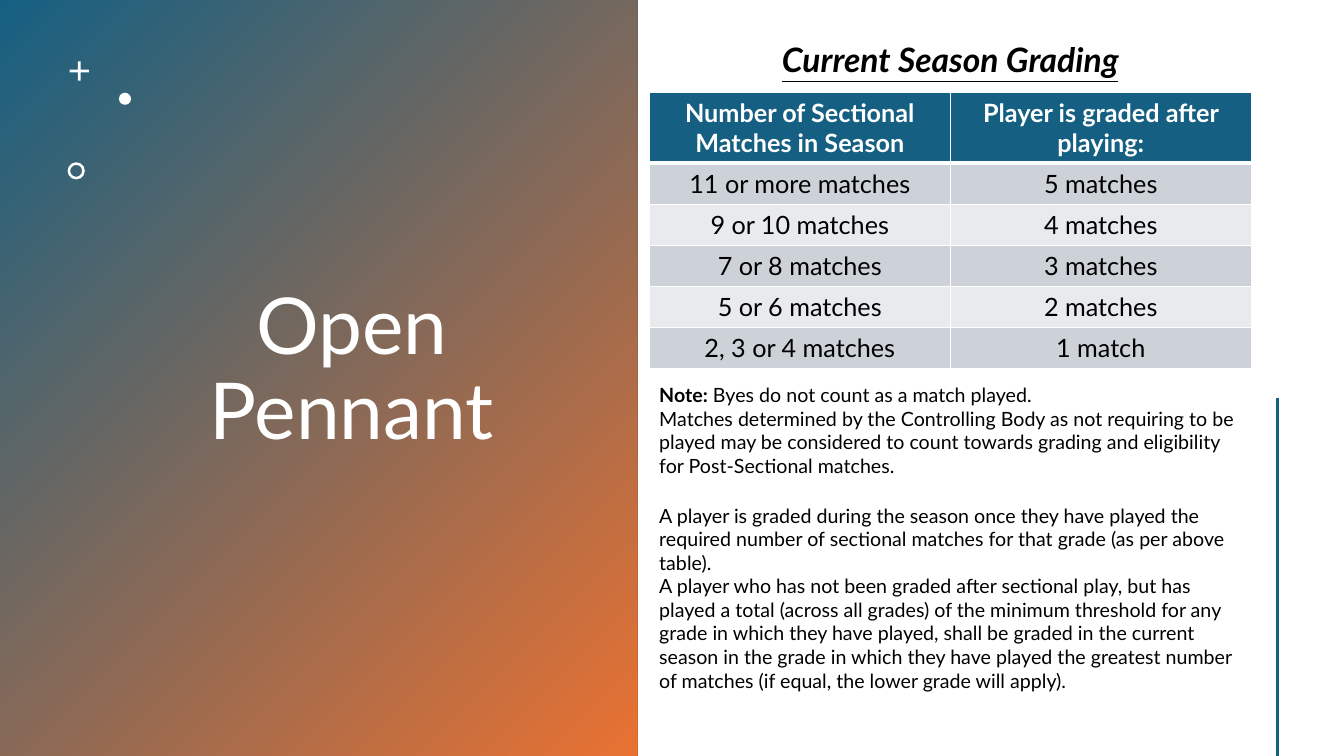
from lxml import etree
from pptx import Presentation
from pptx import util as u
from pptx.dml.color import RGBColor
from pptx.enum import shapes, text
from pptx.oxml import ns

SLIDE_WIDTH, SLIDE_HEIGHT = u.Inches(13.33), u.Inches(7.5)
COLORS = {
    "blue": "156082", "orange": "E97132", "white": "FFFFFF", "black": "000000",
    "dark band": "CCD2D8", "light band": "E8EAED",
}
FONT = "Lato"
CONTENT_LEFT, CONTENT_WIDTH = 48.31, 44.79
HEADER_HEIGHT, ROW_HEIGHT = 9.2, 5.43

GRADING = [
    ("Number of Sectional Matches in Season", "Player is graded after playing:"),
    ("11 or more matches", "5 matches"),
    ("9 or 10 matches", "4 matches"),
    ("7 or 8 matches", "3 matches"),
    ("5 or 6 matches", "2 matches"),
    ("2, 3 or 4 matches", "1 match"),
]
NOTE_LABEL = "Note:"
NOTES = [
    " Byes do not count as a match played.",
    "Matches determined by the Controlling Body as not requiring to be played may be "
    "considered to count towards grading and eligibility for Post-Sectional matches.",
    "A player is graded during the season once they have played the required number of "
    "sectional matches for that grade (as per above table).",
    "A player who has not been graded after sectional play, but has played a total (across "
    "all grades) of the minimum threshold for any grade in which they have played, shall be "
    "graded in the current season in the grade in which they have played the greatest number "
    "of matches (if equal, the lower grade will apply).",
]


def color(name):
    return RGBColor.from_string(COLORS[name])


def across(percent):
    return round(SLIDE_WIDTH * percent / 100)


def down(percent):
    return round(SLIDE_HEIGHT * percent / 100)


def area(left, top, width, height):
    """Turn percentages of the slide into a position and size."""
    return across(left), down(top), across(width), down(height)


def add_run(paragraph, words, size, color_name="black", **formats):
    run = paragraph.add_run()
    run.text = words
    run.font.color.rgb = color(color_name)
    for name, value in {"name": FONT, "size": u.Pt(size), **formats}.items():
        setattr(run.font, name, value)


def add_text_frame(slide, box, anchor=text.MSO_ANCHOR.TOP):
    frame = slide.shapes.add_textbox(*area(*box)).text_frame
    frame.word_wrap = True
    frame.vertical_anchor = anchor
    return frame


def add_line_of_text(slide, box, words, size, color_name="black",
                     anchor=text.MSO_ANCHOR.TOP, spacing=1.0, **formats):
    paragraph = add_text_frame(slide, box, anchor).paragraphs[0]
    paragraph.alignment = text.PP_ALIGN.CENTER
    paragraph.line_spacing = spacing
    add_run(paragraph, words, size, color_name, **formats)


def add_plain_shape(slide, kind, box, adjustment=None):
    shape = slide.shapes.add_shape(kind, *area(*box))
    shape.shadow.inherit = False
    shape.line.fill.background()
    shape.fill.solid()
    shape.fill.fore_color.rgb = color("white")
    if adjustment is not None:
        shape.adjustments[0] = adjustment
    return shape


def add_gradient_panel(slide):
    panel = add_plain_shape(slide, shapes.MSO_SHAPE.RECTANGLE, (0, 0, 47.4, 100))
    panel.fill.gradient()
    panel.fill.gradient_angle = 315
    for stop, name in zip(panel.fill.gradient_stops, ("blue", "orange")):
        stop.color.rgb = color(name)


def add_ornaments(slide):
    kinds = shapes.MSO_SHAPE
    add_plain_shape(slide, kinds.CROSS, (5.18, 8.13, 1.43, 2.53), 0.43)
    add_plain_shape(slide, kinds.OVAL, (8.85, 12.27, 0.9, 1.6))
    add_plain_shape(slide, kinds.DONUT, (5.03, 21.47, 1.28, 2.27), 0.15)


def set_borders(cell, widths):
    """Draw white borders; widths maps a side (L, R, T, B) to points."""
    properties = cell._tc.get_or_add_tcPr()
    for index, (side, width) in enumerate(widths.items()):
        line = etree.Element(ns.qn(f"a:ln{side}"), w=str(u.Pt(width)))
        fill = etree.SubElement(line, ns.qn("a:solidFill"))
        etree.SubElement(fill, ns.qn("a:srgbClr"), val=COLORS["white"])
        properties.insert(index, line)


def fill_cell(cell, words, row):
    is_header = row == 0
    band = "blue" if is_header else "dark band" if row % 2 else "light band"
    cell.fill.solid()
    cell.fill.fore_color.rgb = color(band)
    paragraph = cell.text_frame.paragraphs[0]
    paragraph.alignment = text.PP_ALIGN.CENTER
    add_run(paragraph, words, 18, "white" if is_header else "black", bold=is_header)
    set_borders(cell, {"L": 1, "R": 1, "T": 3 if row == 1 else 1, "B": 3 if is_header else 1})


def add_grading_table(slide):
    columns = len(GRADING[0])
    height = HEADER_HEIGHT + ROW_HEIGHT * (len(GRADING) - 1)
    box = area(CONTENT_LEFT, 12.27, CONTENT_WIDTH, height)
    table = slide.shapes.add_table(len(GRADING), columns, *box).table
    for row, entries in enumerate(GRADING):
        table.rows[row].height = down(ROW_HEIGHT if row else HEADER_HEIGHT)
        for column, words in enumerate(entries):
            fill_cell(table.cell(row, column), words, row)


def add_notes_text(slide):
    frame = add_text_frame(slide, (CONTENT_LEFT, 50, CONTENT_WIDTH, 46.67))
    for index, words in enumerate(NOTES):
        paragraph = frame.add_paragraph() if index else frame.paragraphs[0]
        if index == 0:
            add_run(paragraph, NOTE_LABEL, 14, bold=True)
        if index == 2:
            paragraph.space_before = u.Pt(19)
        add_run(paragraph, words, 14)


def add_side_line(slide):
    x = across(95.05)
    line = slide.shapes.add_connector(shapes.MSO_CONNECTOR.STRAIGHT, x, down(52.6), x, down(100))
    line.line.color.rgb = color("blue")
    line.line.width = u.Pt(2)
    etree.SubElement(line._element.spPr, ns.qn("a:effectLst"))


def main():
    presentation = Presentation()
    presentation.slide_width, presentation.slide_height = SLIDE_WIDTH, SLIDE_HEIGHT
    slide = presentation.slides.add_slide(presentation.slide_layouts[6])
    add_gradient_panel(slide)
    add_line_of_text(slide, (9.75, 5.6, 32.86, 87.07), "Open Pennant", 56, "white",
                     text.MSO_ANCHOR.MIDDLE, 0.9)
    add_ornaments(slide)
    add_grading_table(slide)
    add_side_line(slide)
    add_notes_text(slide)
    add_line_of_text(slide, (CONTENT_LEFT, 4.53, CONTENT_WIDTH, 6.67), "Current Season Grading",
                     24, bold=True, italic=True, underline=True)
    presentation.save("out.pptx")


if __name__ == "__main__":
    main()
